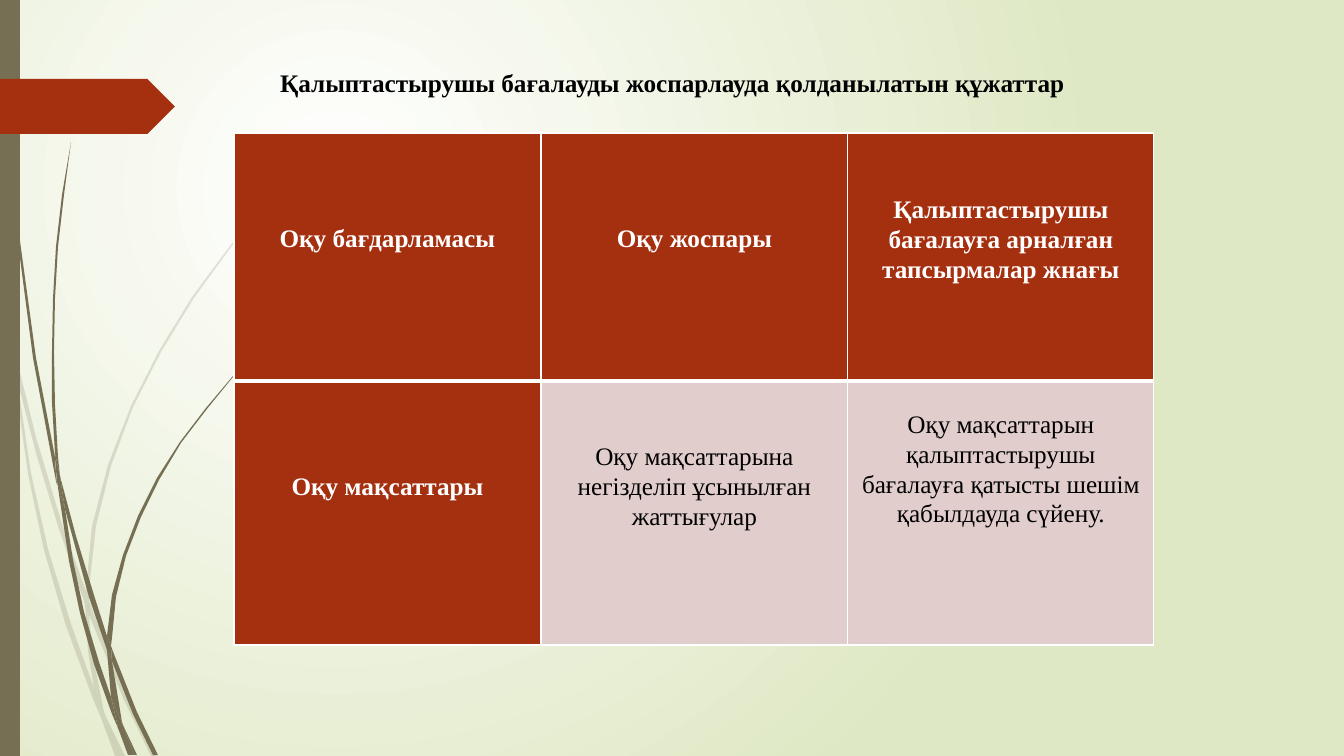
from dataclasses import dataclass

import lxml.etree
import pptx
import pptx.dml.color
import pptx.enum.shapes
import pptx.enum.text
import pptx.oxml
import pptx.oxml.ns
import pptx.util

PX = 12192000 / 1344
NS = 'xmlns:a="http://schemas.openxmlformats.org/drawingml/2006/main"'


@dataclass(frozen=True)
class Theme:
    """Colours and type of the slide."""
    olive: str = "766F54"
    rust: str = "A53010"
    pink: str = "E1CDCC"
    white: str = "FFFFFF"
    black: str = "000000"
    green: str = "DFE8C4"
    font: str = "Times New Roman"
    size: int = 18


THEME = Theme()

FAINT_GRASS = [
    [(11, 353), (9, 325), (0, 284), (0, 301), (10, 347)],
    [(58, 526), (85, 604), (86, 591), (62, 524), (36, 437), (14, 348), (17, 379), (36, 453)],
    [(93, 612), (89, 601), (89, 615), (124, 700), (151, 756), (156, 756), (128, 698)],
    [(120, 756), (125, 756), (106, 717)],
    [(94, 688), (71, 624), (48, 549), (31, 473), (17, 379), (11, 353), (28, 474),
     (44, 550), (66, 626), (93, 699), (102, 720), (100, 713)],
    [(85, 604), (88, 651), (94, 688), (97, 698), (106, 717), (104, 712), (92, 651),
     (89, 615), (89, 613)],
    [(89, 589), (96, 526), (111, 466), (133, 407), (161, 352), (194, 298), (231, 247),
     (270, 200), (292, 176), (314, 155), (314, 154), (291, 176), (270, 199), (230, 246),
     (192, 297), (159, 351), (131, 406), (108, 465), (92, 526), (86, 589), (86, 591),
     (89, 601)],
    [(102, 720), (115, 756), (120, 756)],
    [(89, 613), (89, 615), (89, 601), (86, 591), (85, 604)],
    [(97, 698), (94, 688), (100, 713), (102, 720), (120, 756), (106, 717)],
]
DARK_GRASS = [
    [(7, 111), (17, 235), (33, 358), (56, 481), (57, 485), (55, 461), (55, 457),
     (36, 358), (19, 234), (8, 110), (5, 48), (4, 0), (3, 0), (4, 48)],
    [(89, 597), (107, 650), (107, 638), (107, 636), (94, 595), (76, 536), (60, 476),
     (65, 509)],
    [(114, 654), (111, 646), (112, 661), (133, 714), (153, 755), (158, 755), (137, 712)],
    [(111, 697), (99, 662), (84, 612), (73, 560), (65, 509), (57, 481), (69, 561),
     (80, 613), (94, 664), (112, 714), (118, 728), (117, 723)],
    [(60, 476), (58, 457), (55, 404), (54, 352), (55, 299), (58, 247), (64, 195),
     (71, 142), (62, 195), (56, 247), (53, 299), (52, 352), (52, 403), (55, 453)],
    [(134, 755), (137, 755), (123, 725)],
    [(57, 481), (65, 509), (60, 476), (55, 453), (55, 457)],
    [(112, 638), (116, 597), (126, 556), (141, 517), (159, 480), (181, 443), (207, 409),
     (233, 377), (247, 362), (263, 347), (262, 347), (247, 361), (233, 376), (206, 408),
     (180, 442), (157, 478), (138, 516), (123, 555), (112, 595), (107, 636), (111, 646)],
    [(118, 728), (128, 755), (132, 755)],
    [(107, 650), (111, 697), (117, 712), (123, 725), (122, 722), (112, 661), (110, 656)],
    [(107, 650), (110, 656), (112, 661), (111, 646), (107, 636), (107, 638)],
    [(117, 712), (111, 697), (117, 723), (118, 728), (131, 755), (134, 755), (123, 725)],
]
DOCUMENTS = [
    [("Оқу бағдарламасы", 90), ("Оқу жоспары", 90),
     ("Қалыптастырушы бағалауға арналған тапсырмалар жнағы", 61)],
    [("Оқу мақсаттары", 90),
     ("Оқу мақсаттарына негізделіп ұсынылған жаттығулар", 60),
     ("Оқу мақсаттарын қалыптастырушы бағалауға қатысты шешім қабылдауда сүйену.", 28)],
]


def px(n):
    """Turn pixels into EMU."""
    return pptx.util.Emu(round(n * PX))


def rgb(colour):
    """Turn a hex string into a colour."""
    return pptx.dml.color.RGBColor.from_string(colour)


def write(tf, text, colour=THEME.black, bold=False, align="LEFT", spacing=1.0):
    """Put one formatted paragraph into a text frame."""
    tf.word_wrap = True
    p = tf.paragraphs[0]
    p.alignment = getattr(pptx.enum.text.PP_ALIGN, align)
    p.line_spacing = spacing
    p.space_before = pptx.util.Pt(0)
    r = p.add_run()
    r.text = text
    r.font.name = THEME.font
    r.font.size = pptx.util.Pt(THEME.size)
    r.font.bold = bold
    r.font.color.rgb = rgb(colour)


def paint(sp, colour, alpha=100):
    """Fill a shape without line or shadow."""
    sp.shadow.inherit = False
    sp.line.fill.background()
    sp.fill.solid()
    sp.fill.fore_color.rgb = rgb(colour)
    if alpha < 100:
        clr = sp._element.spPr.find(".//" + pptx.oxml.ns.qn("a:srgbClr"))
        lxml.etree.SubElement(clr, pptx.oxml.ns.qn("a:alpha"), val=str(alpha * 1000))


def add_blade(s, points, alpha):
    """Draw one piece of grass from its outline."""
    builder = s.shapes.build_freeform(*points[0], scale=PX)
    builder.add_line_segments(points[1:], close=True)
    paint(builder.convert_to_shape(), THEME.olive, alpha)


def add_block(s, kind, x, y, w, h, colour):
    """Draw a plain preset shape."""
    shape = getattr(pptx.enum.shapes.MSO_SHAPE, kind)
    paint(s.shapes.add_shape(shape, px(x), px(y), px(w), px(h)), colour)


def set_background(s):
    """Give the slide a round gradient background."""
    fill = s.background.fill
    fill.gradient()
    for stop, position, colour in zip(fill.gradient_stops, (0, 1), (THEME.white, THEME.green)):
        stop.position = position
        stop.color.rgb = rgb(colour)
    grad = s.element.find(".//" + pptx.oxml.ns.qn("a:gradFill"))
    grad.replace(grad.find(pptx.oxml.ns.qn("a:lin")), pptx.oxml.parse_xml(
        f'<a:path {NS} path="circle">'
        '<a:fillToRect l="50000" t="50000" r="100000" b="100000"/></a:path>'))


def set_borders(cell, **widths):
    """Set white borders, with widths in points for sides L, R, T and B."""
    for side in "LRTB":
        width = pptx.util.Pt(widths.get(side, 1))
        cell._tc.get_or_add_tcPr().append(pptx.oxml.parse_xml(
            f'<a:ln{side} {NS} w="{width}"><a:solidFill>'
            f'<a:srgbClr val="{THEME.white}"/></a:solidFill></a:ln{side}>'))


def add_documents(s):
    """Add the table of planning documents."""
    table = s.shapes.add_table(2, 3, px(234), px(133), px(920), px(512)).table
    for column, width in zip(table.columns, (307, 307, 306)):
        column.width = px(width)
    for row, height in zip(table.rows, (248, 264)):
        row.height = px(height)
    for i, texts in enumerate(DOCUMENTS):
        for j, (text, top) in enumerate(texts):
            cell = table.cell(i, j)
            head = i == 0 or j == 0
            set_borders(cell, **{"T" if i else "B": 3})
            cell.fill.solid()
            cell.fill.fore_color.rgb = rgb(THEME.rust if head else THEME.pink)
            cell.margin_left = cell.margin_right = px(7)
            cell.margin_top, cell.margin_bottom = px(top), 0
            write(cell.text_frame, text, THEME.white if head else THEME.black,
                  bold=head, align="CENTER", spacing=1.07)


def add_title(s, text):
    """Place and format the title."""
    sp = s.shapes.title
    sp.left, sp.top, sp.width, sp.height = px(270), px(62), px(854), px(40)
    sp.text_frame.vertical_anchor = pptx.enum.text.MSO_ANCHOR.TOP
    write(sp.text_frame, text, bold=True)


def main():
    """Build and save the slide."""
    prs = pptx.Presentation()
    prs.slide_width, prs.slide_height = px(1344), px(756)
    s = prs.slides.add_slide(prs.slide_layouts[5])
    set_background(s)
    for blades, alpha in ((FAINT_GRASS, 20), (DARK_GRASS, 100)):
        for points in blades:
            add_blade(s, points, alpha)
    add_block(s, "RECTANGLE", 0, 0, 20, 756, THEME.olive)
    add_block(s, "PENTAGON", 0, 79, 175, 55, THEME.rust)
    add_documents(s)
    add_title(s, "Қалыптастырушы бағалауды жоспарлауда қолданылатын құжаттар")
    prs.save("out.pptx")


if __name__ == "__main__":
    main()
